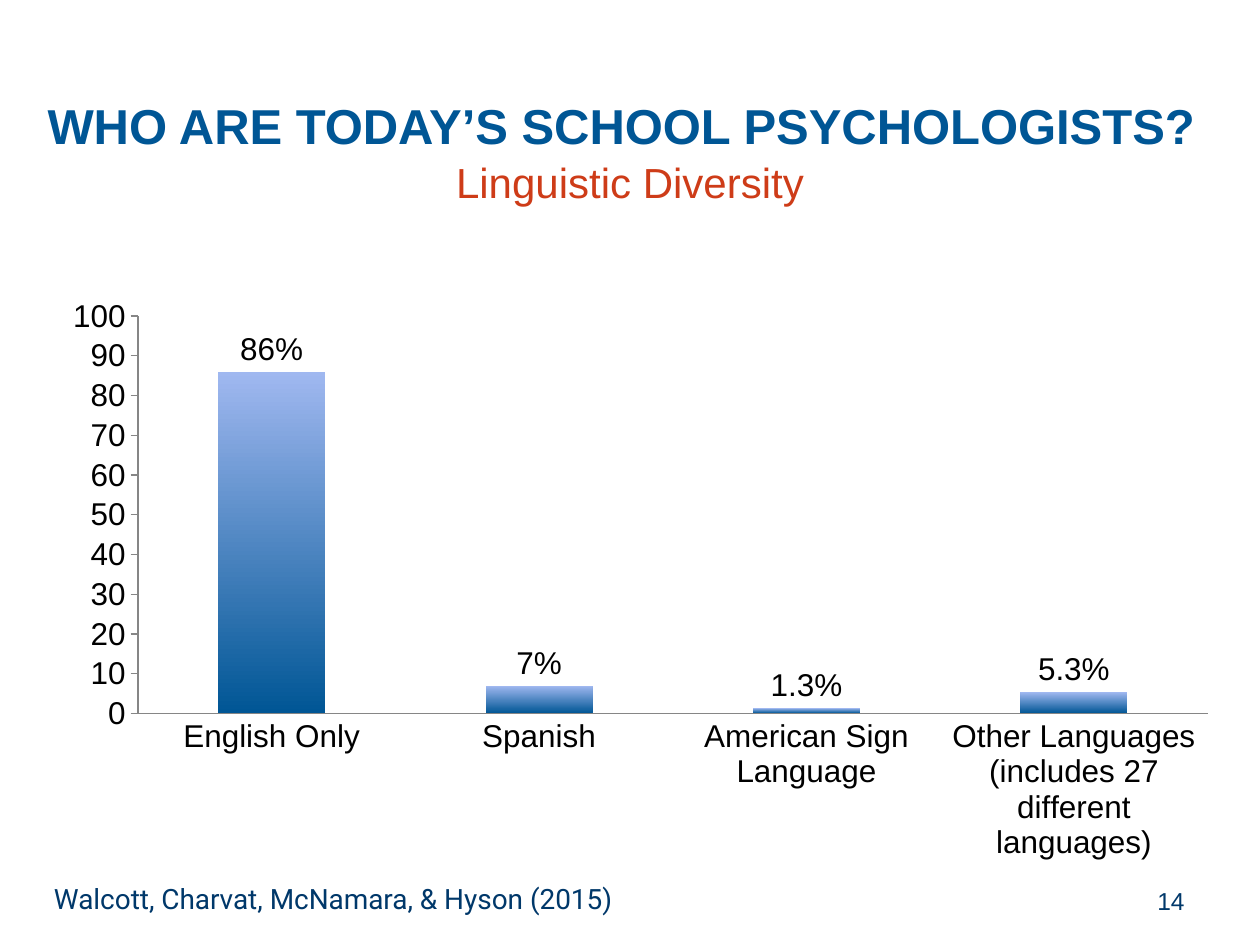
import pptx
import pptx.chart.data
import pptx.dml.color
import pptx.enum.chart
import pptx.enum.text
import pptx.oxml
import pptx.util
from pptx.util import Inches

RGBColor = pptx.dml.color.RGBColor
BLUE = RGBColor(0x00, 0x56, 0x95)
PALE_BLUE = RGBColor(0xA0, 0xB8, 0xF0)
NAVY = RGBColor(0x00, 0x38, 0x6A)
RED = RGBColor(0xCE, 0x3C, 0x18)
BLACK = RGBColor(0x00, 0x00, 0x00)
AXIS_GRAY = RGBColor(0x86, 0x86, 0x86)

ALIGN = pptx.enum.text.PP_ALIGN
ANCHOR = pptx.enum.text.MSO_ANCHOR
TICK = pptx.enum.chart.XL_TICK_MARK

LANGUAGES = {
    "English Only": 86,
    "Spanish": 7,
    "American Sign Language": 1.3,
    "Other Languages (includes 27 different languages)": 5.3,
}


def set_font(font, size, color, name="Arial", bold=False):
    font.name = name
    font.size = pptx.util.Pt(size)
    font.bold = bold
    font.color.rgb = color


def add_text_frame(slide, left, top, width, height, anchor):
    box = slide.shapes.add_textbox(
        Inches(left), Inches(top), Inches(width), Inches(height))
    frame = box.text_frame
    frame.word_wrap = True
    frame.vertical_anchor = anchor
    return frame


def add_title(slide):
    frame = add_text_frame(slide, 0, 0.52, 10, 1.25, ANCHOR.MIDDLE)
    heading = frame.paragraphs[0]
    heading.alignment = ALIGN.CENTER
    question = heading.add_run()
    question.text = "WHO ARE TODAY’S SCHOOL PSYCHOLOGISTS?"
    set_font(question.font, 28, BLUE, bold=True)
    space = heading.add_run()
    space.text = " "
    set_font(space.font, 36, BLUE, bold=True)
    heading.add_line_break()
    topic = heading.add_run()
    topic.text = "Linguistic Diversity"
    set_font(topic.font, 24, RED)


def add_line_of_text(slide, text, place, anchor, align, size, font_name):
    line = add_text_frame(slide, *place, anchor).paragraphs[0]
    line.text = text
    line.alignment = align
    set_font(line.font, size, NAVY, font_name)


def set_plot_area(chart, x, y, w, h):
    layout = pptx.oxml.parse_xml(
        '<c:layout xmlns:c="http://schemas.openxmlformats.org/drawingml/2006/chart">'
        '<c:manualLayout><c:layoutTarget val="inner"/>'
        '<c:xMode val="edge"/><c:yMode val="edge"/>'
        f'<c:x val="{x}"/><c:y val="{y}"/><c:w val="{w}"/><c:h val="{h}"/>'
        '</c:manualLayout></c:layout>')
    plot_area = chart.plots[0]._element.getparent()
    for old_layout in plot_area.findall(layout.tag):
        plot_area.remove(old_layout)
    plot_area.insert(0, layout)


def style_axis(axis, tick_mark):
    axis.has_major_gridlines = False
    axis.major_tick_mark = tick_mark
    axis.minor_tick_mark = TICK.NONE
    axis.format.line.color.rgb = AXIS_GRAY
    axis.format.line.width = pptx.util.Pt(0.75)


def add_language_chart(slide):
    data = pptx.chart.data.CategoryChartData()
    data.categories = LANGUAGES.keys()
    data.add_series("Series 1", LANGUAGES.values())
    chart = slide.shapes.add_chart(
        pptx.enum.chart.XL_CHART_TYPE.COLUMN_CLUSTERED,
        Inches(0.58), Inches(2.33), Inches(9.17), Inches(4.83), data).chart
    chart.has_legend = False
    chart.has_title = False
    set_font(chart.font, 18, BLACK)
    set_plot_area(chart, 0.055, 0.037, 0.927, 0.653)

    # Axes
    style_axis(chart.category_axis, TICK.NONE)
    percent_axis = chart.value_axis
    style_axis(percent_axis, TICK.OUTSIDE)
    percent_axis.minimum_scale = 0
    percent_axis.maximum_scale = 100
    percent_axis.major_unit = 10

    # Columns, shaded from dark at the foot to pale at the top
    columns = chart.plots[0]
    columns.gap_width = 150
    columns.overlap = -25
    columns.vary_by_categories = False
    fill = columns.series[0].format.fill
    fill.gradient()
    fill.gradient_angle = 90
    for stop, color in zip(fill.gradient_stops, (BLUE, PALE_BLUE)):
        stop.color.rgb = color

    # Value labels
    columns.has_data_labels = True
    labels = columns.data_labels
    labels.show_value = True
    labels.number_format = 'General"%"'
    labels.number_format_is_linked = False
    labels.position = pptx.enum.chart.XL_LABEL_POSITION.OUTSIDE_END
    set_font(labels.font, 18, BLACK)


def main():
    deck = pptx.Presentation()
    deck.slide_width = Inches(10)
    deck.slide_height = Inches(7.5)
    slide = deck.slides.add_slide(deck.slide_layouts[6])

    add_title(slide)
    add_language_chart(slide)

    # Page number and citation
    add_line_of_text(slide, "14", (7.17, 6.95, 2.33, 0.4),
                     ANCHOR.MIDDLE, ALIGN.RIGHT, 14, "Arial")
    add_line_of_text(slide, "Walcott, Charvat, McNamara, & Hyson (2015)",
                     (0.33, 6.67, 7.08, 0.64),
                     ANCHOR.BOTTOM, ALIGN.LEFT, 16, "Roboto")

    deck.save("out.pptx")


if __name__ == "__main__":
    main()
